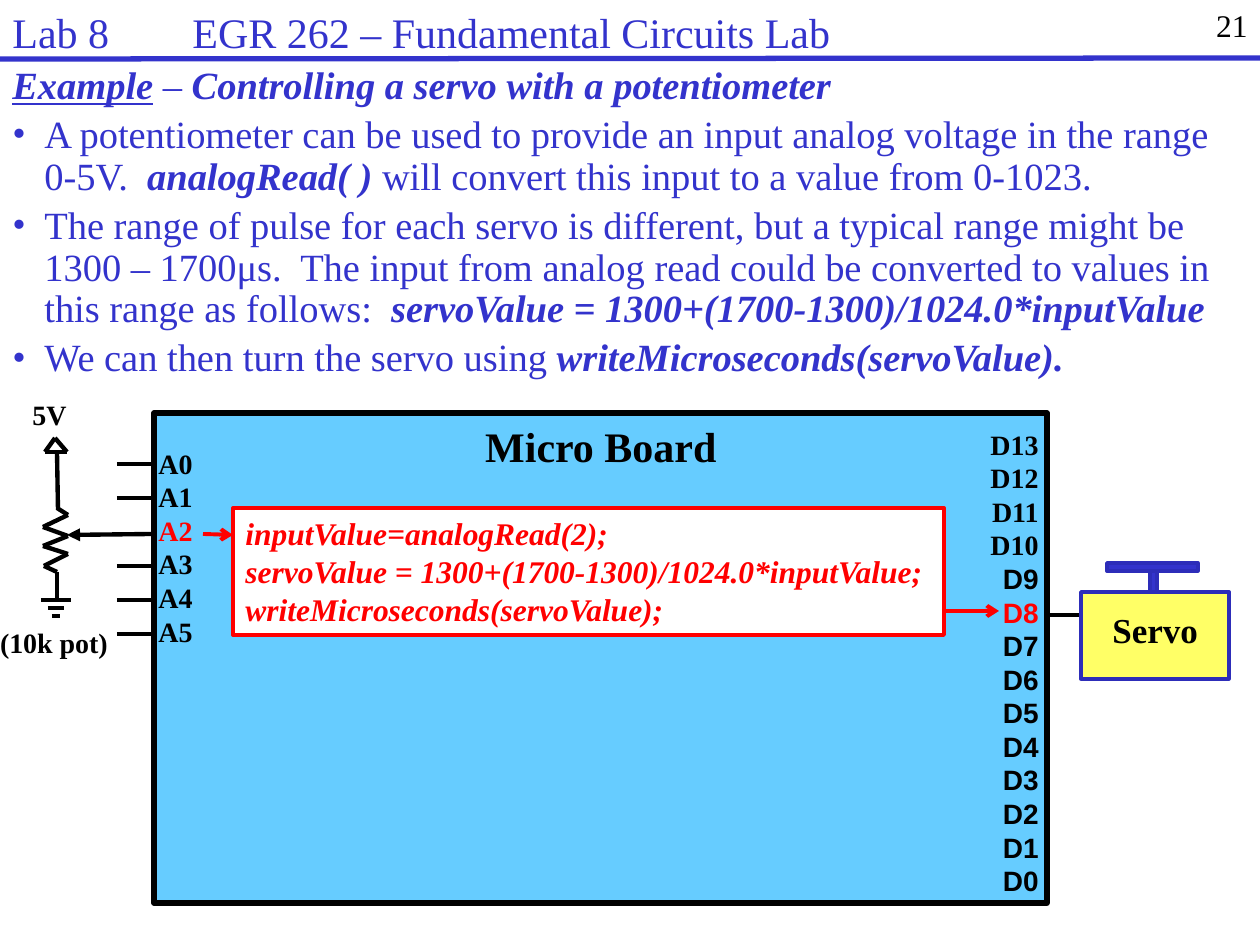
from itertools import pairwise

from lxml import etree
from pptx import Presentation
from pptx.dml.color import RGBColor
from pptx.enum.shapes import MSO_CONNECTOR, MSO_SHAPE
from pptx.enum.text import MSO_ANCHOR, PP_ALIGN
from pptx.oxml.ns import qn
from pptx.util import Pt

LEFT, CENTER, RIGHT = PP_ALIGN.LEFT, PP_ALIGN.CENTER, PP_ALIGN.RIGHT
TOP = MSO_ANCHOR.TOP
RECTANGLE = MSO_SHAPE.RECTANGLE
STRAIGHT = MSO_CONNECTOR.STRAIGHT
SCALE = 914400 / 126


class Theme:
    serif, sans = "Times New Roman", "Arial"
    blue, navy = "3333CC", "2D2DB9"
    black, white, red = "000000", "FFFFFF", "FF0000"
    board, servo = "66CCFF", "FFFF66"
    title, body, code, pin, device = 24, 22, 18, 16, 20
    wire, signal, frame, edge = 2.5, 2.25, 3, 2


def add_block(at, rows=(), size=Theme.pin, color=Theme.black, bold=True,
              align=LEFT, fill=None, edge=None, weight=Theme.edge,
              wrap=True, inset=True):
    place = [round(length * SCALE) for length in at]
    if fill or edge:
        box = page.shapes.add_shape(RECTANGLE, *place)
        box.shadow.inherit = False
        if fill:
            box.fill.solid()
            box.fill.fore_color.rgb = RGBColor.from_string(fill)
        else:
            box.fill.background()
        if edge:
            box.line.color.rgb = RGBColor.from_string(edge)
            box.line.width = Pt(weight)
        else:
            box.line.fill.background()
    else:
        box = page.shapes.add_textbox(*place)
    frame = box.text_frame
    frame.word_wrap = wrap
    frame.vertical_anchor = TOP
    if not inset:
        frame.margin_left = frame.margin_right = 0
        frame.margin_top = frame.margin_bottom = 0
    for index, row in enumerate(rows):
        para = frame.add_paragraph() if index else frame.paragraphs[0]
        para.alignment = align
        for text, *style in [(row,)] if isinstance(row, str) else row:
            look = style[0] if style else {}
            span = para.add_run()
            span.text = text
            span.font.size = Pt(size)
            span.font.name = look.get("font", Theme.serif)
            span.font.bold = look.get("bold", bold)
            span.font.italic = look.get("italic", False)
            span.font.underline = look.get("underline", False)
            span.font.color.rgb = RGBColor.from_string(look.get("color", color))
    return box


def add_line(start, end, color=Theme.black, weight=Theme.wire, arrow=None):
    ends = [round(length * SCALE) for length in (*start, *end)]
    line = page.shapes.add_connector(STRAIGHT, *ends)
    line.line.color.rgb = RGBColor.from_string(color)
    line.line.width = Pt(weight)
    if arrow:
        tag, kind = arrow
        etree.SubElement(line.line._get_or_add_ln(), qn(tag), type=kind)
    etree.SubElement(line._element.spPr, qn("a:effectLst"))


deck = Presentation()
deck.slide_width, deck.slide_height = round(1260 * SCALE), round(945 * SCALE)
page = deck.slides.add_slide(deck.slide_layouts[6])

add_block((998, 0, 262, 63), ["21"], Theme.code, bold=False, align=RIGHT)
add_line((0, 59), (1260, 58), Theme.blue, Theme.frame)
title = add_block((0, 0, 1230, 54), ["Lab 8\tEGR 262 – Fundamental Circuits Lab"],
                  Theme.title, Theme.blue, bold=False)
tabs = etree.SubElement(title.text_frame.paragraphs[0]._p.get_or_add_pPr(), qn("a:tabLst"))
etree.SubElement(tabs, qn("a:tab"), pos=str(round(180 * SCALE)), algn="l")

strong = {"bold": True, "italic": True}
notes = add_block((0, 60, 1260, 335), [
    [("Example", {**strong, "underline": True}), (" – ",),
     ("Controlling a servo with a potentiometer", strong)],
    [("A potentiometer can be used to provide an input analog voltage in the range 0-5V.  ",),
     ("analogRead( ) ", strong),
     ("will convert this input to a value from 0-1023.",)],
    [("The range of pulse for each servo is different, but a typical range might be "
      "1300 – 1700μs.  The input from analog read could be converted to values in "
      "this range as follows:  ",),
     ("servoValue = 1300+(1700-1300)/1024.0*inputValue", strong)],
    [("We can then turn the servo using ",),
     ("writeMicroseconds(servoValue).", strong)],
], Theme.body, Theme.blue, bold=False)
for index, para in enumerate(notes.text_frame.paragraphs):
    para.line_spacing = 0.9
    para.space_before = Pt(4.4)
    if index:
        properties = para._p.get_or_add_pPr()
        properties.set("marL", str(round(32 * SCALE)))
        properties.set("indent", str(round(-32 * SCALE)))
        etree.SubElement(properties, qn("a:buFont"), typeface=Theme.serif)
        etree.SubElement(properties, qn("a:buChar"), char="•")

add_block((154, 414, 894, 491), ["Micro Board"], Theme.title, align=CENTER, fill=Theme.board)
add_block((154, 413, 893, 490), edge=Theme.black, weight=Theme.frame)

active = {"color": Theme.red}
analog_pins = [[(f"A{pin}", active if pin == 2 else {})] for pin in range(6)]
add_block((146, 440, 69, 208), analog_pins)
for pin in (0, 1, 3, 4, 5):
    height = 464 + 34 * pin
    add_line((117, height), (154, height))
add_line((67, 535), (154, 534), arrow=("a:headEnd", "triangle"))

add_block((20, 391, 60, 47), ["5V"], wrap=False)
resistor = [(57, 508), (68, 515), (43, 527), (68, 536), (43, 546),
            (68, 554), (44, 566), (57, 572), (57, 601)]
supply = [(45, 452), (67, 452), (55, 438), (45, 452)]
for outline in (resistor, supply, [(57, 452), (58, 510)]):
    for start, end in pairwise(outline):
        add_line(start, end)
for half, height in ((15, 600), (8, 608), (4, 616)):
    add_line((56 - half, height), (56 + half, height))
add_block((0, 626, 110, 34), ["(10k pot)"], wrap=False, inset=False)

digital_pins = [[(f"D{pin}", {"font": Theme.serif if pin > 9 else Theme.sans,
                             "color": Theme.red if pin == 8 else Theme.black})]
                for pin in range(13, -1, -1)]
add_block((841, 421, 210, 481), digital_pins, align=RIGHT)

code = ["inputValue=analogRead(2);",
        "servoValue = 1300+(1700-1300)/1024.0*inputValue;",
        "writeMicroseconds(servoValue);"]
add_block((233, 508, 711, 127), [[(text, {"italic": True})] for text in code],
          Theme.code, Theme.red, fill=Theme.white, edge=Theme.red, weight=Theme.signal)
for start, end in (((203, 534), (233, 535)), ((945, 611), (999, 611))):
    add_line(start, end, Theme.red, Theme.signal, ("a:tailEnd", "arrow"))

add_line((1048, 615), (1084, 615))
for at, fill in (((1081, 592, 148, 87), Theme.servo),
                 ((1150, 567, 7, 25), Theme.blue),
                 ((1107, 563, 91, 8), Theme.blue)):
    add_block(at, fill=fill, edge=Theme.navy)
add_block((1100, 602, 112, 55), ["Servo"], Theme.device, wrap=False)

deck.save("out.pptx")
